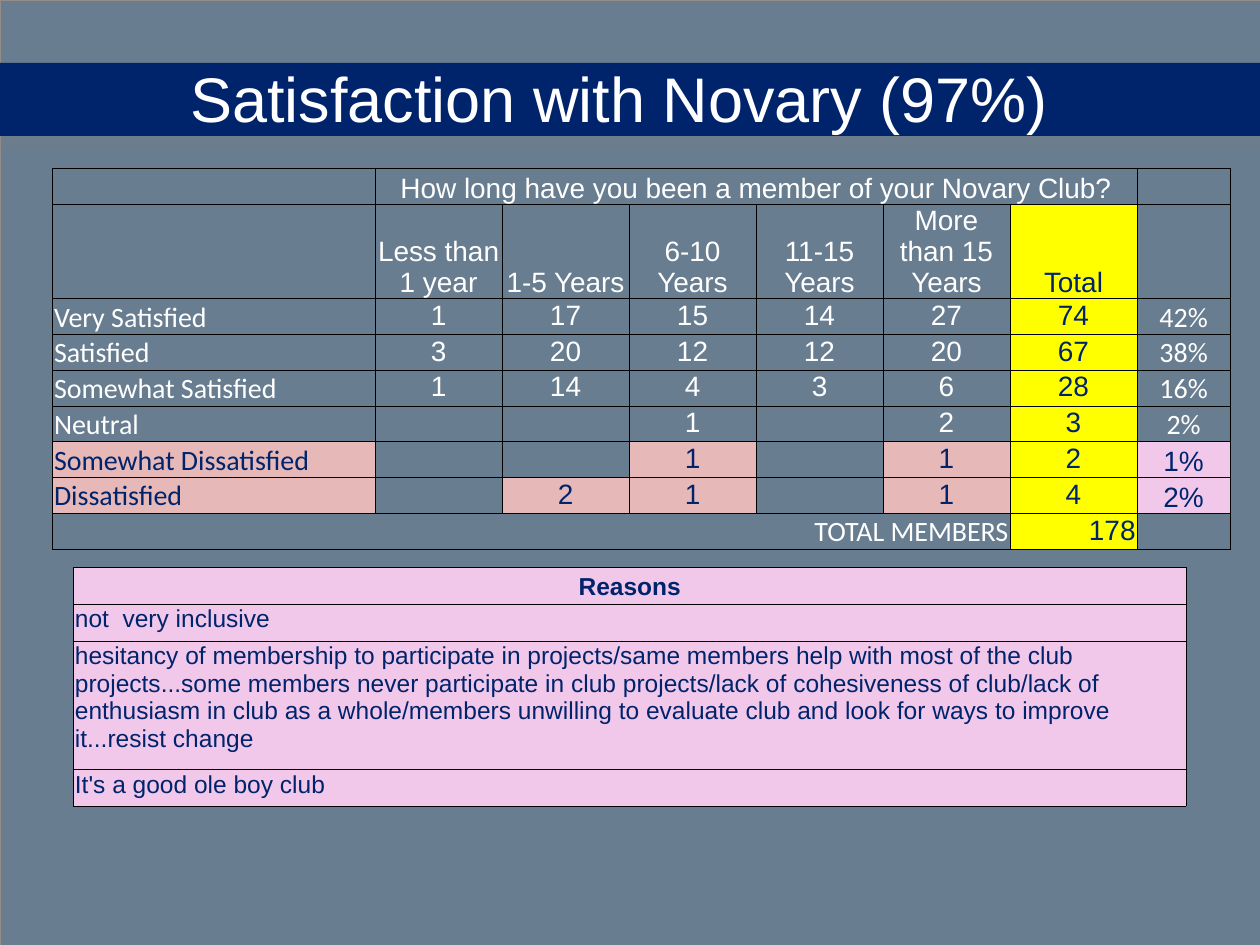
from dataclasses import dataclass

from lxml.etree import SubElement as Sub
from pptx import Presentation
from pptx.dml.color import RGBColor as RGB
from pptx.enum.shapes import MSO_SHAPE as SHAPE
from pptx.enum.text import MSO_ANCHOR as ANCHOR, PP_ALIGN as ALIGN
from pptx.oxml.ns import qn
from pptx.util import Cm, Pt


@dataclass(frozen=True)
class Theme:
    """Colours, fonts and type sizes of the slide."""
    back: str = "687D90"
    frame: str = "958D85"
    navy: str = "00246C"
    white: str = "FFFFFF"
    black: str = "000000"
    shadow: str = "808080"
    total: str = "FFFF00"
    rose: str = "E6B8B7"
    pink: str = "F2C8EA"
    sans: str = "Arial"
    label: str = "Calibri"
    title_size: int = 36
    grid_size: int = 16
    reason_size: int = 14


T = Theme()
TITLE = "Satisfaction with Novary (97%)"
GRID = [
    ["", "How long have you been a member of your Novary Club?", "", "", "", "", "", ""],
    ["", "Less than 1 year", "1-5 Years", "6-10 Years", "11-15 Years",
     "More than 15 Years", "Total", ""],
    ["Very Satisfied", "1", "17", "15", "14", "27", "74", "42%"],
    ["Satisfied", "3", "20", "12", "12", "20", "67", "38%"],
    ["Somewhat Satisfied", "1", "14", "4", "3", "6", "28", "16%"],
    ["Neutral", "", "", "1", "", "2", "3", "2%"],
    ["Somewhat Dissatisfied", "", "", "1", "", "1", "2", "1%"],
    ["Dissatisfied", "", "2", "1", "", "1", "4", "2%"],
    ["TOTAL MEMBERS", "", "", "", "", "", "178", ""],
]
REASONS = [
    "Reasons",
    "not  very inclusive",
    "hesitancy of membership to participate in projects/same members help with most "
    "of the club projects...some members never participate in club projects/lack of "
    "cohesiveness of club/lack of enthusiasm in club as a whole/members unwilling to "
    "evaluate club and look for ways to improve it...resist change",
    "It's a good ole boy club",
]


def apply(obj, values):
    """Set each named attribute on an object."""
    for name, value in values.items():
        setattr(obj, name, value)


def write(tf, text, size, font, color, align=ALIGN.LEFT, bold=False):
    """Write one formatted paragraph into a text frame."""
    p = tf.paragraphs[0]
    p.alignment = align
    if not text:
        Sub(p._p, qn("a:endParaRPr"), sz=str(size * 100))
        return
    r = p.add_run()
    r.text = text
    apply(r.font, {"size": Pt(size), "name": font, "bold": bold})
    r.font.color.rgb = RGB.from_string(color)


def add_rect(s, left, top, width, height, fill=None, line=None):
    """Add a plain rectangle, filled or outlined."""
    sp = s.shapes.add_shape(SHAPE.RECTANGLE, Cm(left), Cm(top), Cm(width), Cm(height))
    sp.shadow.inherit = False
    if fill:
        sp.fill.solid()
        sp.fill.fore_color.rgb = RGB.from_string(fill)
    else:
        sp.fill.background()
    if line:
        sp.line.color.rgb = RGB.from_string(line)
        sp.line.width = Pt(0.13)
    else:
        sp.line.fill.background()
    return sp


def add_shadow(sp):
    """Give a shape a soft shadow below it."""
    effects = sp._element.spPr.find(qn("a:effectLst"))
    shadow = Sub(effects, qn("a:outerShdw"), blurRad=str(Pt(7)), dist=str(Pt(4.8)),
                 dir="5400000", algn="ctr", rotWithShape="0")
    color = Sub(shadow, qn("a:srgbClr"), val=T.shadow)
    Sub(color, qn("a:alpha"), val="25000")


def add_title(s):
    """Add the centred slide title."""
    tf = s.shapes.add_textbox(Cm(3.38), Cm(1.07), Cm(18.21), Cm(1.8)).text_frame
    tf.word_wrap = True
    write(tf, TITLE, T.title_size, T.sans, T.white, ALIGN.CENTER)


def add_grid(s, left, top, widths, heights):
    """Add an unstyled table with the given column widths and row heights."""
    table = s.shapes.add_table(len(heights), len(widths), Cm(left), Cm(top),
                               Cm(sum(widths)), Cm(sum(heights))).table
    apply(table, {"first_row": False, "horz_banding": False})
    for col, width in zip(table.columns, widths):
        col.width = Cm(width)
    for row, height in zip(table.rows, heights):
        row.height = Cm(height)
    return table


def format_cell(cell, fill, anchor):
    """Set margins, thin borders and fill of a cell."""
    apply(cell, {"margin_left": Cm(0.03), "margin_right": Cm(0.03),
                 "margin_top": Cm(0.03), "margin_bottom": 0, "vertical_anchor": anchor})
    tc_pr = cell._tc.get_or_add_tcPr()
    for side in ("lnL", "lnR", "lnT", "lnB"):
        ln = Sub(tc_pr, qn(f"a:{side}"), w=str(Pt(0.5)))
        Sub(Sub(ln, qn("a:solidFill")), qn("a:srgbClr"), val=T.black)
    if fill:
        cell.fill.solid()
        cell.fill.fore_color.rgb = RGB.from_string(fill)
    else:
        cell.fill.background()


def grid_fill(i, j, text):
    """Choose the fill of a satisfaction cell."""
    if j == 6 and i > 0:
        return T.total
    if i in (6, 7) and text:
        return T.pink if j == 7 else T.rose
    return None


def add_satisfaction(s):
    """Add the table of satisfaction by length of membership."""
    last = len(GRID) - 1
    table = add_grid(s, 1.06, 3.39, [6.5] + [2.56] * 6 + [1.88],
                     [0.71, 1.87] + [0.71] * 7)
    table.cell(0, 1).merge(table.cell(0, 6))
    table.cell(last, 0).merge(table.cell(last, 5))
    for i, row in enumerate(GRID):
        for j, text in enumerate(row):
            fill = grid_fill(i, j, text)
            anchor = ANCHOR.BOTTOM if i < 2 or j in (0, 7) else ANCHOR.TOP
            align = ALIGN.LEFT if j == 0 else ALIGN.CENTER
            if i == last:
                anchor = ANCHOR.TOP if j else ANCHOR.MIDDLE
                align = ALIGN.RIGHT
            font = T.label if j == 0 or (j == 7 and not fill) else T.sans
            cell = table.cell(i, j)
            format_cell(cell, fill, anchor)
            write(cell.text_frame, text, T.grid_size, font,
                  T.navy if fill else T.white, align)


def add_reasons(s):
    """Add the list of reasons for dissatisfaction."""
    table = add_grid(s, 1.48, 11.44, [22.43], [0.74, 0.74, 2.59, 0.74])
    for i, text in enumerate(REASONS):
        head = i == 0
        cell = table.cell(i, 0)
        format_cell(cell, T.pink, ANCHOR.MIDDLE if head else ANCHOR.TOP)
        write(cell.text_frame, text, T.reason_size, T.sans, T.navy,
              ALIGN.CENTER if head else ALIGN.LEFT, head)


def main():
    """Build and save the slide."""
    prs = Presentation()
    apply(prs, {"slide_width": Cm(25.4), "slide_height": Cm(19.05)})
    s = prs.slides.add_slide(prs.slide_layouts[6])
    s.background.fill.solid()
    s.background.fill.fore_color.rgb = RGB.from_string(T.back)
    add_rect(s, 0, 0, 25.4, 19.05, line=T.frame)
    add_shadow(add_rect(s, -0.2, 1.27, 25.83, 1.47, fill=T.navy))
    add_satisfaction(s)
    add_reasons(s)
    add_title(s)
    prs.save("out.pptx")


if __name__ == "__main__":
    main()
